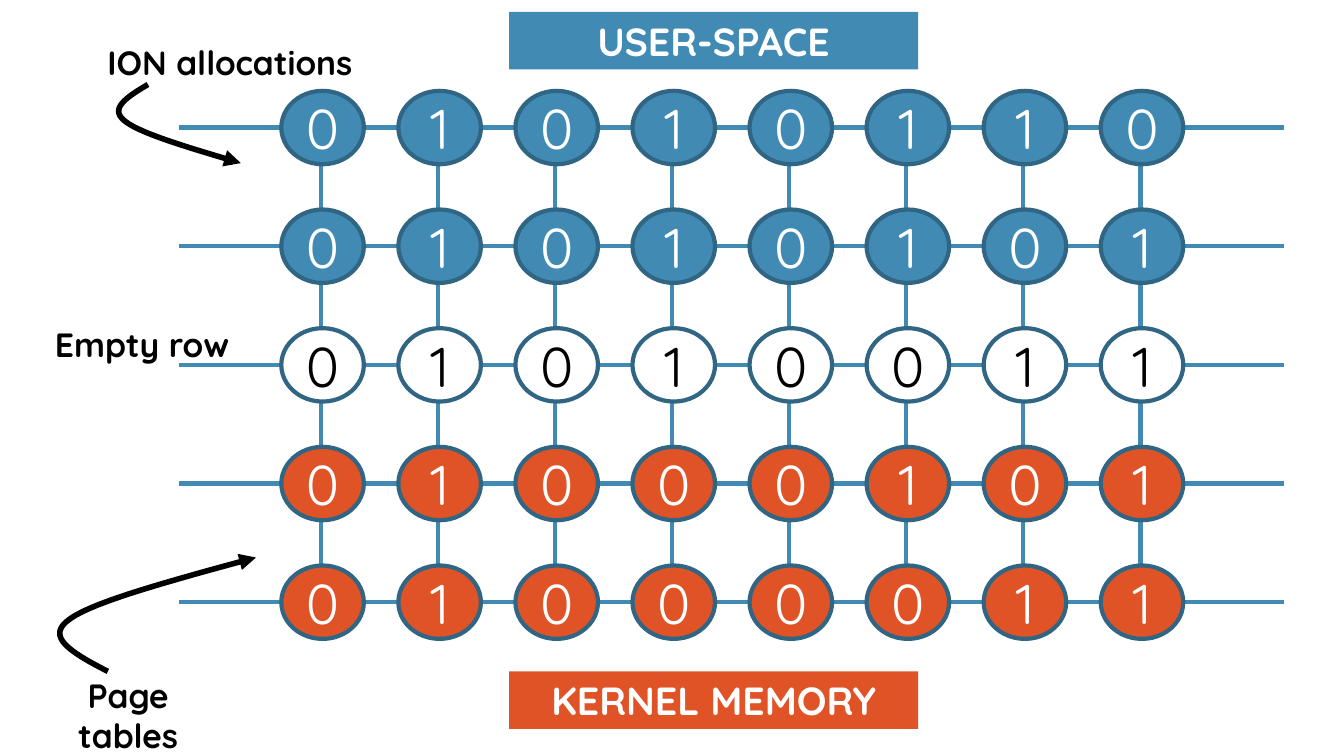
from dataclasses import dataclass

from lxml.etree import SubElement
from pptx import Presentation
from pptx.dml.color import RGBColor
from pptx.enum.shapes import MSO_CONNECTOR, MSO_SHAPE
from pptx.enum.text import MSO_ANCHOR, MSO_AUTO_SIZE, PP_ALIGN
from pptx.oxml.ns import qn
from pptx.shapes.autoshape import Shape
from pptx.shapes.shapetree import GroupShapes, SlideShapes
from pptx.util import Cm, Pt

BLUE, NAVY, RED = "418AB3", "306684", "DF5327"
WHITE, BLACK = "FFFFFF", "000000"
FONT = "Quicksand"

# All lengths are in centimetres.
LEFT, TOP = 7.09, 2.29
COL_STEP, ROW_STEP = 2.95, 2.99
CELL_W, CELL_H = 2.08, 1.85
COLS = 8
WIRE_LEFT, WIRE_RIGHT = 4.5, 32.36
WIRE_TOP, WIRE_BASE = 3.15, 15.39

Point = tuple[float, float]


@dataclass
class Row:
    bits: str
    fill: str
    ink: str


@dataclass
class Label:
    text: str
    left: float
    top: float
    width: float
    height: float
    size: int
    ink: str
    fill: str | None = None


@dataclass
class Curve:
    start: Point
    bend_a: Point
    bend_b: Point
    end: Point


ROWS = [
    Row("01010110", BLUE, WHITE),
    Row("01010101", BLUE, WHITE),
    Row("01010011", WHITE, BLACK),
    Row("01000101", RED, WHITE),
    Row("01000011", RED, WHITE),
]
LABELS = [
    Label("KERNEL MEMORY", 12.83, 16.92, 10.31, 1.45, 28, WHITE, RED),
    Label("USER-SPACE", 12.83, 0.3, 10.31, 1.45, 28, WHITE, BLUE),
    Label("Page tables", 0.64, 16.87, 5.18, 1.27, 24, BLACK),
    Label("Empty row", 0.99, 8.03, 5.18, 1.27, 24, BLACK),
    Label("ION allocations", 2.44, 0.94, 6.71, 1.27, 24, BLACK),
]
CURVES = [
    Curve((2.72, 16.92), (0.56, 15.82), (0.99, 15.52), (6.45, 14.05)),
    Curve((3.73, 2.13), (2.41, 2.9), (2.67, 3.12), (6.07, 4.11)),
]


def tint(value: str) -> RGBColor:
    return RGBColor.from_string(value)


def stroke(shape, shade: str, width: float) -> None:
    shape.line.color.rgb = tint(shade)
    shape.line.width = Pt(width)


def write(shape: Shape, text: str, size: int, ink: str, bold: bool = False) -> None:
    """Put one centred paragraph into the shape."""
    para = shape.text_frame.paragraphs[0]
    para.text = text
    para.alignment = PP_ALIGN.CENTER
    font = para.runs[0].font
    font.name, font.size, font.bold = FONT, Pt(size), bold
    font.color.rgb = tint(ink)


def add_wire(shapes: SlideShapes | GroupShapes, start: Point, end: Point) -> None:
    ends = [Cm(value) for value in (*start, *end)]
    wire = shapes.add_connector(MSO_CONNECTOR.STRAIGHT, *ends)
    stroke(wire, BLUE, 3)
    SubElement(wire.element.spPr, qn("a:effectLst"))


def add_cell(shapes: GroupShapes, left: float, top: float, bit: str, row: Row) -> None:
    cell = shapes.add_shape(MSO_SHAPE.OVAL, Cm(left), Cm(top), Cm(CELL_W), Cm(CELL_H))
    cell.shadow.inherit = False
    cell.fill.solid()
    cell.fill.fore_color.rgb = tint(row.fill)
    stroke(cell, NAVY, 3)
    cell.text_frame.vertical_anchor = MSO_ANCHOR.MIDDLE
    write(cell, bit, 40, row.ink)


def add_row(shapes: SlideShapes, top: float, row: Row) -> None:
    group = shapes.add_group_shape().shapes
    mid = top + CELL_H / 2
    add_wire(group, (WIRE_LEFT, mid), (WIRE_RIGHT, mid))
    for col, bit in enumerate(row.bits):
        add_cell(group, LEFT + col * COL_STEP, top, bit, row)


def add_label(shapes: SlideShapes, label: Label) -> None:
    area = [Cm(v) for v in (label.left, label.top, label.width, label.height)]
    if label.fill:
        box = shapes.add_shape(MSO_SHAPE.RECTANGLE, *area)
        box.shadow.inherit = False
        box.fill.solid()
        box.fill.fore_color.rgb = tint(label.fill)
        box.line.fill.background()
    else:
        box = shapes.add_textbox(*area)
    frame = box.text_frame
    frame.word_wrap = True
    frame.auto_size = MSO_AUTO_SIZE.SHAPE_TO_FIT_TEXT
    frame.vertical_anchor = MSO_ANCHOR.TOP
    write(box, label.text, label.size, label.ink, bold=True)


def trace(curve: Curve, steps: int = 40) -> list[tuple[int, int]]:
    """Return points along the cubic Bézier curve."""
    knots = (curve.start, curve.bend_a, curve.bend_b, curve.end)
    points = []
    for step in range(steps + 1):
        t = step / steps
        u = 1 - t
        parts = (u**3, 3 * u * u * t, 3 * u * t * t, t**3)
        x, y = (sum(p * knot[axis] for p, knot in zip(parts, knots)) for axis in (0, 1))
        points.append((Cm(x), Cm(y)))
    return points


def add_curve(shapes: SlideShapes, curve: Curve) -> None:
    first, *rest = trace(curve)
    pen = shapes.build_freeform(*first)
    pen.add_line_segments(rest, close=False)
    arrow = pen.convert_to_shape()
    arrow.shadow.inherit = False
    arrow.fill.background()
    stroke(arrow, BLACK, 4)
    SubElement(arrow.element.spPr.find(qn("a:ln")), qn("a:tailEnd"), type="triangle")


def main() -> None:
    deck = Presentation()
    deck.slide_width, deck.slide_height = Cm(33.87), Cm(19.05)
    shapes = deck.slides.add_slide(deck.slide_layouts[6]).shapes
    for col in range(COLS):
        x = LEFT + 1 + col * COL_STEP
        add_wire(shapes, (x, WIRE_TOP), (x, WIRE_BASE))
    for rank, row in enumerate(ROWS):
        add_row(shapes, TOP + rank * ROW_STEP, row)
    for label in LABELS:
        add_label(shapes, label)
    for curve in CURVES:
        add_curve(shapes, curve)
    deck.save("out.pptx")


if __name__ == "__main__":
    main()
